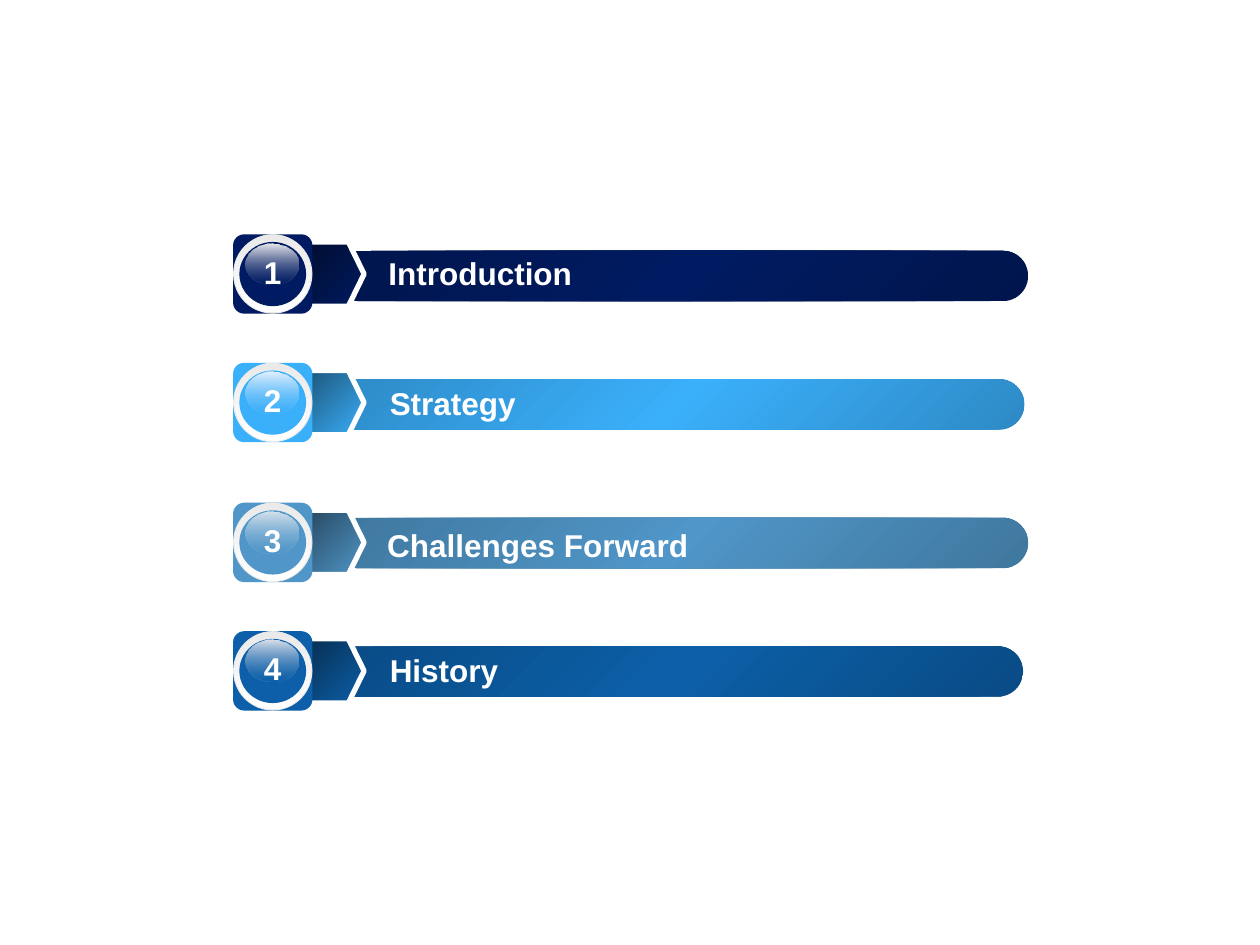
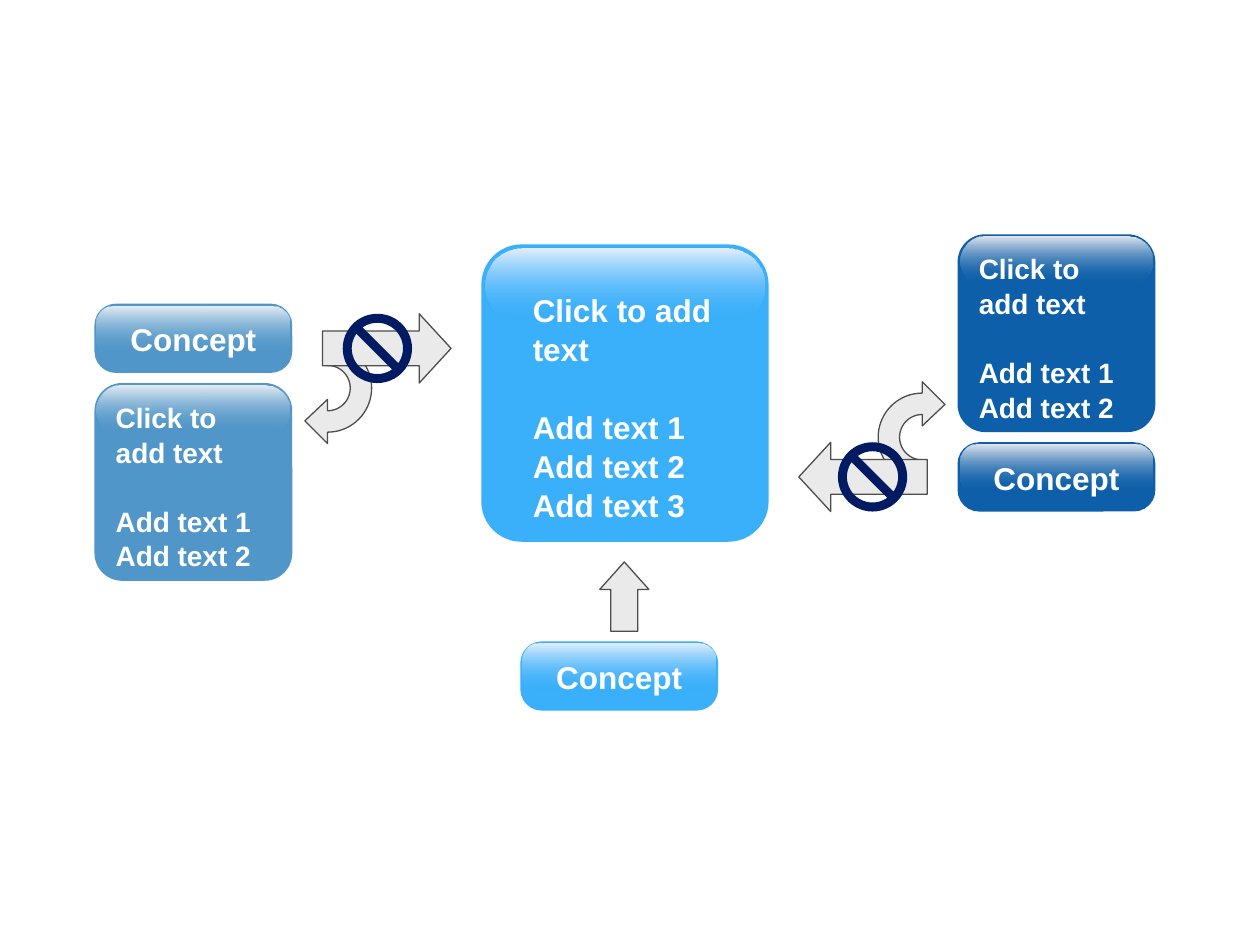
"""Build a numbered agenda slide and a concept diagram slide."""
from math import cos, radians, sin

from lxml import etree
from pptx import Presentation
from pptx import util as u
from pptx.dml.color import RGBColor
from pptx.enum import shapes, text
from pptx.oxml.ns import qn

WHITE, SILVER, GREY = "FFFFFF", "EAEAEA", "4D4D4D"
NAVY, SKY, STEEL, BLUE = "001B61", "3AAFFA", "5096C8", "0C5FA8"
KIND = shapes.MSO_SHAPE
LEFT, CENTER = text.PP_ALIGN.LEFT, text.PP_ALIGN.CENTER


def paint(shape, colours=(), angle=90, last_alpha=100, line=None, width=0.75):
    """Fill with no colour, one colour or an even gradient, and set the outline."""
    shape.shadow.inherit = False
    if not colours:
        shape.fill.background()
    elif len(colours) == 1:
        shape.fill.solid()
        shape.fill.fore_color.rgb = RGBColor.from_string(colours[0])
    else:
        shape.fill.gradient()
        shape.fill.gradient_angle = 360 - angle
        stops = shape._element.spPr.find(".//" + qn("a:gsLst"))
        stops.clear()
        last = len(colours) - 1
        for index, colour in enumerate(colours):
            stop = etree.SubElement(stops, qn("a:gs"), pos=str(100000 * index // last))
            tone = etree.SubElement(stop, qn("a:srgbClr"), val=colour)
            if index == last and last_alpha < 100:
                etree.SubElement(tone, qn("a:alpha"), val=str(last_alpha * 1000))
    if line:
        shape.line.color.rgb = RGBColor.from_string(line)
        shape.line.width = u.Pt(width)
    else:
        shape.line.fill.background()


def write(shape, lines, size, align=LEFT, wrap=True, anchor=text.MSO_ANCHOR.TOP):
    """Write bold white lines, with a gap between the first line and the rest."""
    frame = shape.text_frame
    frame.text = "\n".join(lines)
    frame.word_wrap = wrap
    frame.vertical_anchor = anchor
    for index, paragraph in enumerate(frame.paragraphs):
        paragraph.alignment = align
        if len(lines) > 1:
            paragraph.line_spacing = 1.04
        if index == 1:
            paragraph.space_before = u.Pt(size * 1.2)
        font = paragraph.runs[0].font
        font.name, font.size, font.bold = "Arial", u.Pt(size), True
        font.color.rgb = RGBColor.from_string(WHITE)


presentation = Presentation()
presentation.slide_width, presentation.slide_height = u.Inches(10), u.Inches(7.5)
blank_layout = presentation.slide_layouts[6]

slide = presentation.slides.add_slide(blank_layout)
agenda = [
    ("Introduction", 1.86, 2.65, 1.99, 2.96, 1.91, NAVY, "00154D", "000C2D", "EEEEF0"),
    ("Strategy", 2.88, 2.62, 3.01, 2.97, 2.94, SKY, "2E8AC6", "1B5173", "E8F2FE"),
    ("Challenges Forward", 3.99, 2.65, 4.11, 2.95, 4.07, STEEL, "3F779E", "25455C", "D9E3EE"),
    ("History", 5.01, 2.61, 5.13, 2.97, 5.06, BLUE, "094B85", "062C4D", "DFE2EC"),
]
for number, item in enumerate(agenda, 1):
    title, top, bar_left, bar_top, label_left, label_top, colour, shade, dark, light = item
    parts = [
        (KIND.ROUNDED_RECTANGLE, (bar_left, bar_top, 5.51, 0.4), 0.5,
         dict(colours=[shade, colour, shade], angle=45), None),
        (KIND.PENTAGON, (2.39, top + 0.06, 0.5, 0.51), 0.25,
         dict(colours=[dark, colour], angle=45, line=WHITE, width=3), None),
        (KIND.ROUNDED_RECTANGLE, (label_left, label_top, 3.54, 0.51), 0.17, {}, (title, LEFT)),
        (KIND.ROUNDED_RECTANGLE, (1.85, top, 0.63, 0.63), 0.14, dict(colours=[colour]), None),
        (KIND.OVAL, (1.85, top, 0.63, 0.63), None, dict(colours=[SILVER]), None),
        (KIND.OVAL, (1.86, top, 0.61, 0.62), None, dict(colours=[SILVER, WHITE]), None),
        (KIND.OVAL, (1.9, top + 0.06, 0.53, 0.51), None, dict(colours=[colour]), None),
        (KIND.OVAL, (1.95, top + 0.07, 0.42, 0.33), None,
         dict(colours=[light, colour], last_alpha=37), None),
        (KIND.ROUNDED_RECTANGLE, (1.85, top, 0.63, 0.59), 0.17, {}, (str(number), CENTER)),
    ]
    for kind, box, adjustment, style, label in parts:
        shape = slide.shapes.add_shape(kind, *map(u.Inches, box))
        if adjustment is not None:
            shape.adjustments[0] = adjustment
        paint(shape, **style)
        if label:
            write(shape, [label[0]], 18, label[1], False, text.MSO_ANCHOR.MIDDLE)

slide = presentation.slides.add_slide(blank_layout)
up_arrow = slide.shapes.add_shape(KIND.UP_ARROW, *map(u.Inches, (4.76, 4.46, 0.39, 0.55)))
up_arrow.adjustments[0], up_arrow.adjustments[1] = 0.55, 0.56
paint(up_arrow, [SILVER], line=GREY)

blocked_flows = [
    (1, 2.6, 3.08, 2.56, 2.72, 2.49),
    (-1, 7.32, 3.47, 6.34, 6.65, 3.51),
]
for direction, center_x, center_y, arrow_left, sign_left, top in blocked_flows:
    turns = [radians(degree) for degree in range(-90, 91, 5)]
    outline = [(0.18 * cos(turn), 0.18 * sin(turn)) for turn in reversed(turns)]
    outline += [(0.35 * cos(turn), 0.35 * sin(turn)) for turn in turns]
    outline += [(0, 0.44), (-0.18, 0.26), (0, 0.09)]
    points = [(u.Inches(center_x + direction * x), u.Inches(center_y + direction * y))
              for x, y in outline]
    builder = slide.shapes.build_freeform(*points[0])
    builder.add_line_segments(points[1:], close=True)
    paint(builder.convert_to_shape(), [SILVER], line=GREY)

    arrow = slide.shapes.add_shape(
        KIND.RIGHT_ARROW, *map(u.Inches, (arrow_left, top, 1.02, 0.55)))
    arrow.adjustments[0], arrow.adjustments[1] = 0.5, 0.46
    arrow.rotation = 0 if direction == 1 else 180
    paint(arrow, [SILVER], line=GREY)

    no_sign = slide.shapes.add_shape(
        KIND.NO_SYMBOL, *map(u.Inches, (sign_left, top, 0.55, 0.55)))
    no_sign.adjustments[0] = 0.13
    paint(no_sign, [NAVY])

prompt = ["Click to add text", "Add text 1", "Add text 2"]
card = (1.57, 1.57, 0.14, 0.02, 0.38, 0.5, (0.07, 0.08, 1.42, 1.44), 16, LEFT, prompt)
hub = (2.28, 2.36, 0.14, 0.03, 0.58, 0.5, (0.31, 0.31, 1.81, 1.9), 18, LEFT,
       prompt + ["Add text 3"])
pill = (1.57, 0.55, 0.31, 0.02, 0.38, 0.34, (0, 0.08, 1.57, 0.4), 18, CENTER, ["Concept"])
glass = {STEEL: "E6EDF4", BLUE: "E4E7EF", SKY: "E5F0FE"}
panels = [
    (0.75, 3.04, STEEL, card), (7.6, 1.86, BLUE, card), (3.82, 1.94, SKY, hub),
    (0.75, 2.41, STEEL, pill), (4.13, 5.09, SKY, pill), (7.6, 3.51, BLUE, pill),
]
for left, top, colour, design in panels:
    width, height, corner, inset, gloss_height, gloss_corner, area, size, align, lines = design
    panel = slide.shapes.add_shape(
        KIND.ROUNDED_RECTANGLE, *map(u.Inches, (left, top, width, height)))
    panel.adjustments[0] = corner
    paint(panel, [colour])
    gloss_box = (left + inset, top + inset, width - 2 * inset, gloss_height)
    gloss = slide.shapes.add_shape(KIND.ROUNDED_RECTANGLE, *map(u.Inches, gloss_box))
    gloss.adjustments[0] = gloss_corner
    paint(gloss, [glass[colour], colour], last_alpha=0)
    text_box = (left + area[0], top + area[1], area[2], area[3])
    write(slide.shapes.add_textbox(*map(u.Inches, text_box)), lines, size, align)

presentation.save("out.pptx")
